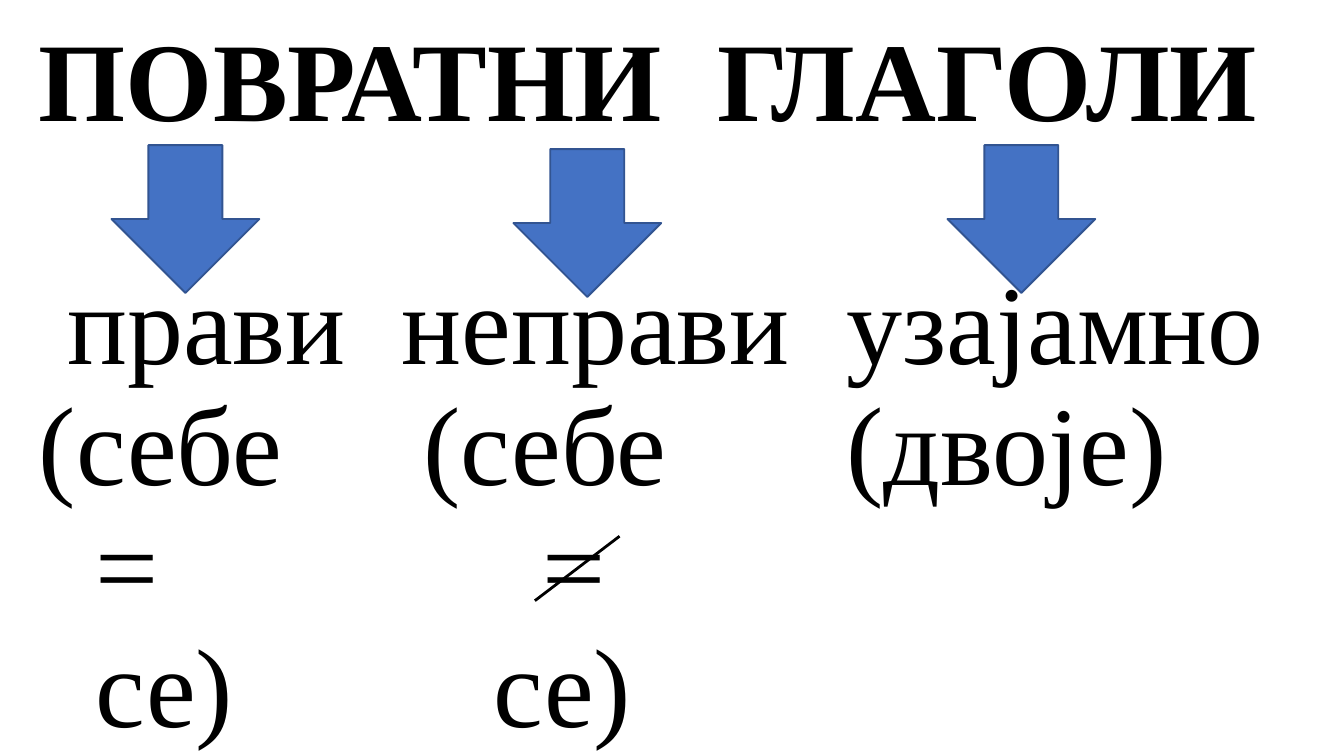
from dataclasses import dataclass

from lxml.etree import SubElement
from pptx import Presentation
from pptx.dml.color import RGBColor
from pptx.enum.shapes import MSO_CONNECTOR, MSO_SHAPE
from pptx.oxml.ns import qn
from pptx.util import Inches, Pt


@dataclass(frozen=True)
class Theme:
    font: str = "Times New Roman"
    size: float = 60
    leading: float = 64.8
    ink: str = "000000"
    fill: str = "4472C4"
    outline: str = "325491"


THEME = Theme()
ROW = THEME.leading / 72  # height of one text line, in inches
ARROW = 1.1


def rgb(value):
    return RGBColor.from_string(value)


def add_text(slide, lines, box, bold=False, indents=None, tab=None):
    """Place lines in a box, each with its own left indent."""
    tf = slide.shapes.add_textbox(*map(Inches, box)).text_frame
    tf.word_wrap = True
    tf.margin_left = tf.margin_right = tf.margin_top = tf.margin_bottom = 0
    for i, line in enumerate(lines):
        p = tf.paragraphs[0] if i == 0 else tf.add_paragraph()
        p.line_spacing = Pt(THEME.leading)
        pPr = p._p.get_or_add_pPr()
        if indents:
            pPr.set("marL", str(Inches(indents[i])))
            pPr.set("indent", "0")
        if tab:
            stops = SubElement(pPr, qn("a:tabLst"))
            SubElement(stops, qn("a:tab"), pos=str(Inches(tab)), algn="l")
        r = p.add_run()
        r.text = line
        r.font.name = THEME.font
        r.font.size = Pt(THEME.size)
        r.font.bold = bold
        r.font.color.rgb = rgb(THEME.ink)


def add_heading(slide, box):
    add_text(slide, ["ПОВРАТНИ\tГЛАГОЛИ"], box, bold=True, tab=5.05)


def add_arrow(slide, left, top):
    sp = slide.shapes.add_shape(
        MSO_SHAPE.DOWN_ARROW, *map(Inches, (left, top, ARROW, ARROW)))
    sp.shadow.inherit = False
    sp.fill.solid()
    sp.fill.fore_color.rgb = rgb(THEME.fill)
    sp.line.color.rgb = rgb(THEME.outline)
    sp.line.width = Pt(1)


def add_strike(slide, left, top, width, height):
    """Draw the slash that turns the equals sign into 'not equal'."""
    line = slide.shapes.add_connector(
        MSO_CONNECTOR.STRAIGHT, Inches(left + width), Inches(top),
        Inches(left), Inches(top + height))
    line.line.color.rgb = rgb(THEME.ink)
    line.line.width = Pt(1.5)
    SubElement(line._element.spPr, qn("a:effectLst"))


def add_column(slide, box, lines, indents, arrow, strike=None):
    """One verb type: its lines, the arrow above and an optional slash."""
    left, top, width = box
    add_text(slide, lines, (left, top, width, len(lines) * ROW),
             indents=indents)
    add_arrow(slide, left + arrow[0], top + arrow[1])
    if strike:
        x, y, w, h = strike
        add_strike(slide, left + x, top + y, w, h)


def main():
    prs = Presentation()
    prs.slide_width = Inches(10)
    prs.slide_height = prs.slide_width * 9 // 16
    slide = prs.slides.add_slide(prs.slide_layouts[6])

    # Heading
    add_heading(slide, (0.29, 0.17, 9.5, ROW))

    # True, untrue and reciprocal reflexive verbs
    top = 1.98
    add_column(slide, (0.29, top, 2.6), ["прави", "(себе", "=", "се)"],
               (0.21, 0, 0.42, 0.42), arrow=(0.54, -0.9))
    add_column(slide, (2.99, top, 3.2), ["неправи", "(себе", "=", "се)"],
               (0, 0.16, 1.05, 0.68), arrow=(0.83, -0.87),
               strike=(0.99, 2.01, 0.63, 0.48))
    add_column(slide, (6.3, top, 3.5), ["узaјамно", "(двоје)"],
               (0, 0), arrow=(0.75, -0.9))

    prs.save("out.pptx")


if __name__ == "__main__":
    main()
